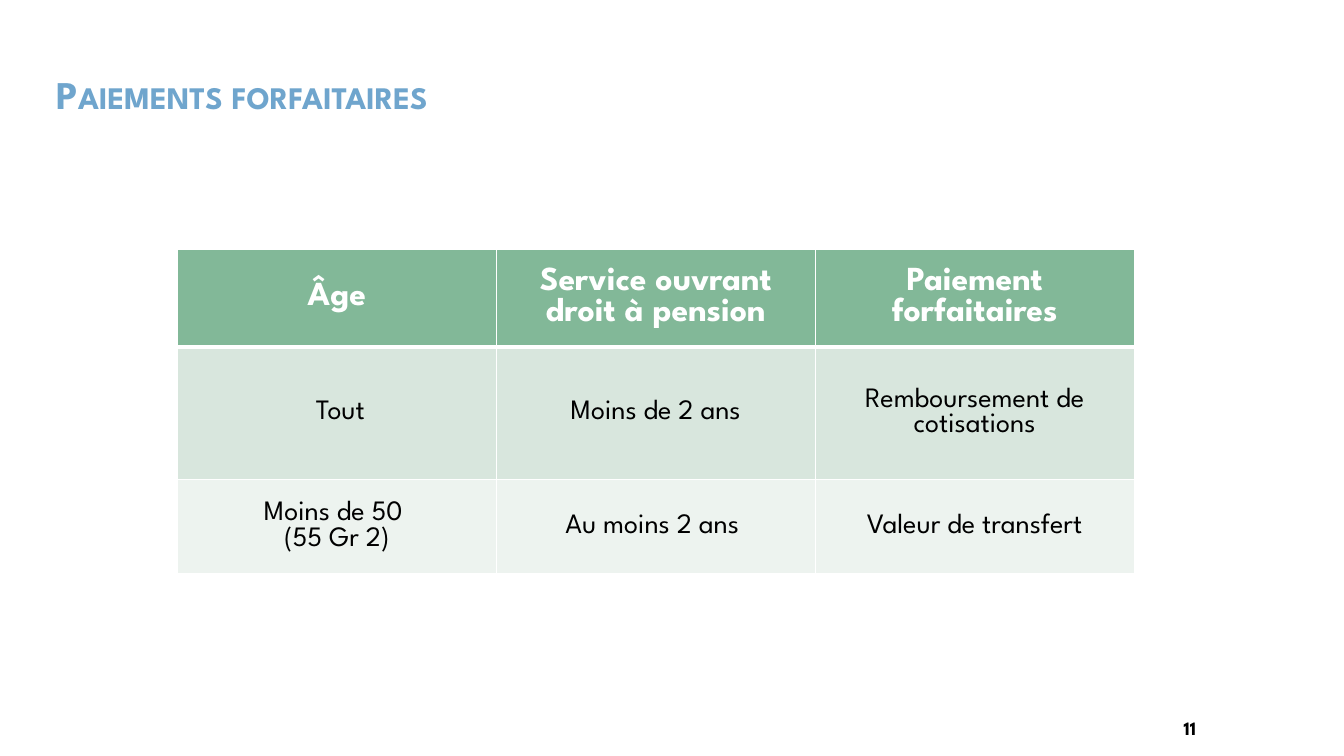
import pptx
import pptx.dml.color
import pptx.enum.text
import pptx.oxml
import pptx.oxml.ns
import pptx.util

FONT = "League Spartan"
WIDTH, HEIGHT = 13.33, 7.5
ROW_HEIGHTS = [0.97, 1.32, 0.93]
ROW_FILLS = ["82B898", "D8E6DD", "EDF3EF"]
ROWS = [
    ["Âge", "Service ouvrant droit à pension", "Paiement forfaitaires"],
    [" Tout", "Moins de 2 ans", "Remboursement de cotisations"],
    ["Moins de 50 \n(55 Gr 2)", "Au moins 2 ans ", "Valeur de transfert"],
]
ALIGN = pptx.enum.text.PP_ALIGN
MIDDLE = pptx.enum.text.MSO_ANCHOR.MIDDLE


def rgb(value):
    return pptx.dml.color.RGBColor.from_string(value)


def inches(box):
    return [pptx.util.Inches(v) for v in box]


def style(p, size, color, bold=True, align=ALIGN.LEFT):
    p.alignment = align
    p.font.name = FONT
    p.font.size = pptx.util.Pt(size)
    p.font.bold = bold
    p.font.color.rgb = rgb(color)


def add_title(slide, box, text):
    sp = slide.shapes.title
    sp.left, sp.top, sp.width, sp.height = inches(box)
    sp.fill.solid()
    sp.fill.fore_color.rgb = rgb("FFFFFF")
    tf = sp.text_frame
    tf.text = text
    tf.word_wrap = True
    tf.auto_size = pptx.enum.text.MSO_AUTO_SIZE.NONE
    tf.vertical_anchor = MIDDLE
    p = tf.paragraphs[0]
    p.line_spacing = 0.9
    style(p, 28, "6FA5CD")
    p._p.pPr.find(pptx.oxml.ns.qn("a:defRPr")).set("cap", "small")


def add_borders(cell, top, bottom):
    """Draw white cell borders; top and bottom are widths in points."""
    tc_pr = cell._tc.get_or_add_tcPr()
    for side, width in (("L", 1), ("R", 1), ("T", top), ("B", bottom)):
        tc_pr.append(pptx.oxml.parse_xml(
            f'<a:ln{side} {pptx.oxml.ns.nsdecls("a")} w="{pptx.util.Pt(width)}">'
            f'<a:solidFill><a:srgbClr val="FFFFFF"/></a:solidFill></a:ln{side}>'))


def add_payment_table(slide, box):
    table = slide.shapes.add_table(len(ROWS), len(ROWS[0]), *inches(box)).table
    for i, texts in enumerate(ROWS):
        table.rows[i].height = pptx.util.Inches(ROW_HEIGHTS[i])
        header = i == 0
        for j, text in enumerate(texts):
            cell = table.cell(i, j)
            cell.text = text
            cell.vertical_anchor = MIDDLE
            add_borders(cell, 3 if i == 1 else 1, 3 if header else 1)
            cell.fill.solid()
            cell.fill.fore_color.rgb = rgb(ROW_FILLS[i])
            for p in cell.text_frame.paragraphs:
                style(p, 24 if header else 20, "FFFFFF" if header else "000000",
                      header, ALIGN.CENTER)


def add_page_number(slide, box, number):
    tf = slide.shapes.add_textbox(*inches(box)).text_frame
    tf.word_wrap = True
    tf.text = str(number)
    style(tf.paragraphs[0], 13.5, "000000", align=ALIGN.RIGHT)


def main():
    prs = pptx.Presentation()
    prs.slide_width, prs.slide_height = inches((WIDTH, HEIGHT))
    slide = prs.slides.add_slide(prs.slide_layouts[5])
    add_payment_table(slide, (1.76, 2.47, 9.49, sum(ROW_HEIGHTS)))
    add_title(slide, (0.46, 0.63, 4.01, 0.66), "Paiements forfaitaires")
    add_page_number(slide, (9.71, 7.06, 2.25, 0.3), 11)
    prs.save("out.pptx")


if __name__ == "__main__":
    main()
